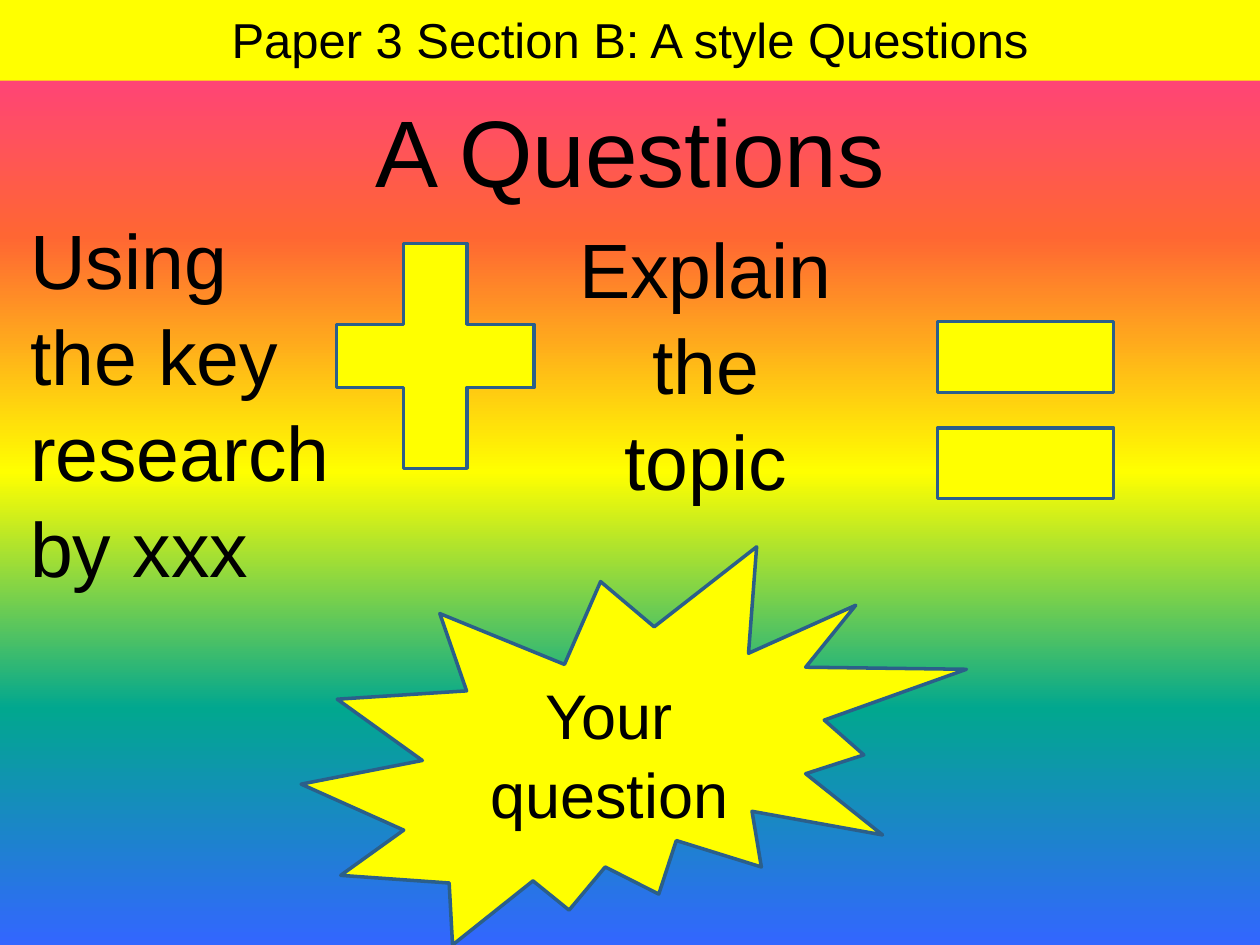
from dataclasses import dataclass
from typing import Optional

from lxml.etree import SubElement
from pptx import Presentation
from pptx.dml.color import RGBColor
from pptx.enum.shapes import MSO_SHAPE
from pptx.enum.text import MSO_ANCHOR, PP_ALIGN
from pptx.oxml.ns import qn
from pptx.slide import Slide
from pptx.util import Inches, Pt


@dataclass(frozen=True)
class Theme:
    font: str = "Arial"
    ink: str = "000000"
    panel: str = "FFFF00"
    outline: str = "2B5F8A"
    outline_width: float = 2
    rainbow: tuple[str, ...] = ("FF3399", "FF6633", "FFFF00", "01A78F", "3366FF")
    title: int = 28
    heading: int = 54
    term: int = 44
    result: int = 36


THEME = Theme()


@dataclass(frozen=True)
class Caption:
    wording: str
    size: int
    align: PP_ALIGN = PP_ALIGN.CENTER
    anchor: MSO_ANCHOR = MSO_ANCHOR.TOP
    inset_y: float = 0.05
    spacing: float = 1.04


@dataclass(frozen=True)
class Item:
    left: float
    top: float
    width: float
    height: float
    preset: Optional[MSO_SHAPE] = None
    outlined: bool = True
    caption: Optional[Caption] = None


ITEMS = (
    Item(0, 0, 10, 0.64, MSO_SHAPE.RECTANGLE, False,
         Caption("Paper 3 Section B: A style Questions", THEME.title,
                 anchor=MSO_ANCHOR.BOTTOM, inset_y=0.1, spacing=1)),
    Item(0, 0.6, 10, 6.38,
         caption=Caption("A Questions", THEME.heading, inset_y=0.1)),
    Item(0.14, 1.61, 2.68, 3.06,
         caption=Caption("Using the key research by xxx", THEME.term, PP_ALIGN.LEFT)),
    Item(2.39, 1.61, 2.13, 2.43, MSO_SHAPE.MATH_PLUS),
    Item(4.4, 1.68, 2.4, 2.32, caption=Caption("Explain the topic", THEME.term)),
    Item(7.19, 2.06, 1.9, 2.39, MSO_SHAPE.MATH_EQUAL),
    Item(2.39, 4.34, 5.28, 3.16, MSO_SHAPE.EXPLOSION2,
         caption=Caption("Your question", THEME.result, anchor=MSO_ANCHOR.MIDDLE)),
)


def paint_background(slide: Slide) -> None:
    fill = slide.background.fill
    fill.gradient()
    fill.gradient_angle = 270
    stops = next(slide.element.iter(qn("a:gsLst")))
    for old_stop in list(stops):
        stops.remove(old_stop)
    step = 100000 // (len(THEME.rainbow) - 1)
    for index, color in enumerate(THEME.rainbow):
        stop = SubElement(stops, qn("a:gs"), pos=str(index * step))
        SubElement(stop, qn("a:srgbClr"), val=color)


def write_caption(shape, caption: Caption) -> None:
    frame = shape.text_frame
    frame.word_wrap = True
    frame.vertical_anchor = caption.anchor
    frame.margin_top = frame.margin_bottom = Inches(caption.inset_y)
    paragraph = frame.paragraphs[0]
    paragraph.alignment = caption.align
    paragraph.line_spacing = caption.spacing
    run = paragraph.add_run()
    run.text = caption.wording
    run.font.name = THEME.font
    run.font.size = Pt(caption.size)
    run.font.color.rgb = RGBColor.from_string(THEME.ink)


def draw_item(slide: Slide, item: Item) -> None:
    bounds = [Inches(v) for v in (item.left, item.top, item.width, item.height)]
    if item.preset is None:
        shape = slide.shapes.add_textbox(*bounds)
    else:
        shape = slide.shapes.add_shape(item.preset, *bounds)
        shape.shadow.inherit = False
        shape.fill.solid()
        shape.fill.fore_color.rgb = RGBColor.from_string(THEME.panel)
        if item.outlined:
            shape.line.color.rgb = RGBColor.from_string(THEME.outline)
            shape.line.width = Pt(THEME.outline_width)
        else:
            shape.line.fill.background()
    if item.caption:
        write_caption(shape, item.caption)


def main() -> None:
    deck = Presentation()
    deck.slide_width, deck.slide_height = Inches(10), Inches(7.5)
    slide = deck.slides.add_slide(deck.slide_layouts[6])
    paint_background(slide)
    for item in ITEMS:
        draw_item(slide, item)
    deck.save("out.pptx")


if __name__ == "__main__":
    main()
